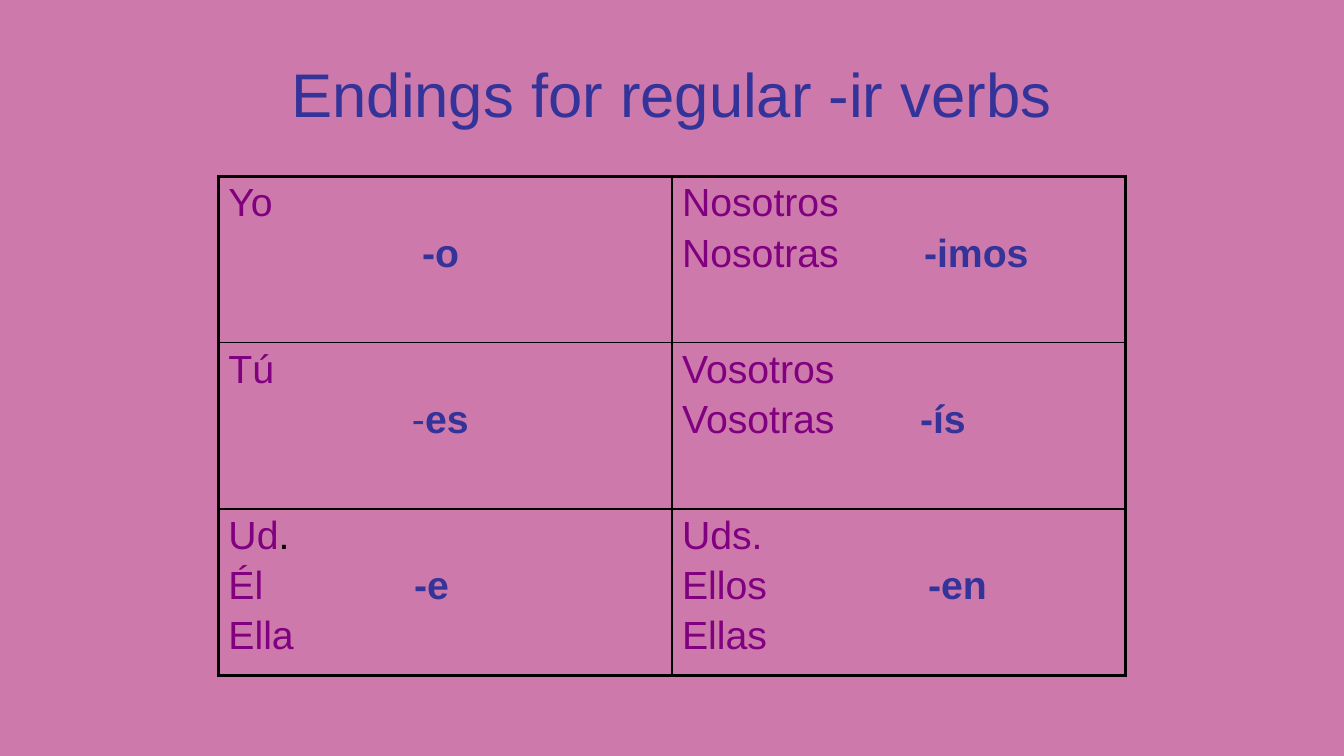
from lxml import etree
from pptx import Presentation
from pptx.dml.color import RGBColor
from pptx.enum.text import MSO_ANCHOR, PP_ALIGN
from pptx.oxml.ns import qn
from pptx.util import Emu, Inches, Pt

CENTER = PP_ALIGN.CENTER
MIDDLE = MSO_ANCHOR.MIDDLE
TITLE_ONLY = 5
COLS, ROWS = 80, 45

PINK, BLUE, PURPLE, BLACK = "CD79AB", "333399", "800080", "000000"
THICK, THIN = 2.25, 1

# Each cell: the tab stop of its ending in inches, then its lines.
# Each line is a list of runs: text, colour, bold.
ENDINGS = [
    [(1.92, [[("Yo", PURPLE, False)],
             [("\t-o", BLUE, True)]]),
     (2.4, [[("Nosotros", PURPLE, False)],
            [("Nosotras", PURPLE, False), ("\t-imos", BLUE, True)]])],
    [(1.82, [[("Tú", PURPLE, False)],
             [("\t-", BLUE, False), ("es", BLUE, True)]]),
     (2.36, [[("Vosotros", PURPLE, False)],
             [("Vosotras", PURPLE, False), ("\t-ís", BLUE, True)]])],
    [(1.84, [[("Ud", PURPLE, False), (".", BLACK, False)],
             [("Él", PURPLE, False), ("\t-e", BLUE, True)],
             [("Ella", PURPLE, False)]]),
     (2.44, [[("Uds.", PURPLE, False)],
             [("Ellos", PURPLE, False), ("\t-en", BLUE, True)],
             [("Ellas", PURPLE, False)]])],
]


def rgb(color):
    return RGBColor.from_string(color)


class Deck:
    font = "Arial"
    title_size = Pt(44)
    body_size = Pt(28)
    line_gap = Pt(4.6)

    def __init__(self, width, height):
        self.prs = Presentation()
        self.prs.slide_width, self.prs.slide_height = width, height

    def box(self, col, row, cols, rows):
        """Turn grid units into left, top, width and height."""
        x, y = self.prs.slide_width / COLS, self.prs.slide_height / ROWS
        return [Emu(round(n)) for n in (col * x, row * y, cols * x, rows * y)]

    def slide(self, color):
        self.s = self.prs.slides.add_slide(self.prs.slide_layouts[TITLE_ONLY])
        fill = self.s.background.fill
        fill.solid()
        fill.fore_color.rgb = rgb(color)

    def title(self, text, color, *grid):
        sp = self.s.shapes.title
        sp.left, sp.top, sp.width, sp.height = self.box(*grid)
        tf = sp.text_frame
        tf.text = text
        tf.vertical_anchor = MIDDLE
        p = tf.paragraphs[0]
        p.alignment = CENTER
        p.font.name, p.font.size = self.font, self.title_size
        p.font.color.rgb = rgb(color)

    def table(self, rows, *grid):
        n_rows, n_cols = len(rows), len(rows[0])
        tbl = self.s.shapes.add_table(n_rows, n_cols, *self.box(*grid)).table
        tbl.first_row = tbl.horz_banding = False
        for i, row in enumerate(rows):
            for j, (stop, lines) in enumerate(row):
                cell = tbl.cell(i, j)
                outer = {"L": j == 0, "R": j == n_cols - 1,
                         "T": i == 0, "B": i == n_rows - 1}
                self.borders(cell, outer)
                cell.fill.background()
                self.lines(cell.text_frame, stop, lines)

    def borders(self, cell, outer):
        """Draw the four edges, thick where outer is true."""
        tc_pr = cell._tc.get_or_add_tcPr()
        for side, is_outer in outer.items():
            width = Pt(THICK if is_outer else THIN)
            ln = etree.SubElement(tc_pr, qn(f"a:ln{side}"), w=str(width))
            fill = etree.SubElement(ln, qn("a:solidFill"))
            etree.SubElement(fill, qn("a:srgbClr"), val=BLACK)

    def lines(self, tf, stop, lines):
        for i, runs in enumerate(lines):
            p = tf.add_paragraph() if i else tf.paragraphs[0]
            p.space_before = self.line_gap if i else Pt(0)
            tabs = etree.SubElement(p._p.get_or_add_pPr(), qn("a:tabLst"))
            etree.SubElement(tabs, qn("a:tab"), pos=str(Inches(stop)), algn="l")
            p.font.name, p.font.size = self.font, self.body_size
            for text, color, bold in runs:
                r = p.add_run()
                r.text = text
                r.font.bold = bold
                r.font.color.rgb = rgb(color)


def main():
    deck = Deck(Inches(13.33), Inches(7.5))
    deck.slide(PINK)
    deck.title("Endings for regular -ir verbs", BLUE, 4, 1.8, 72, 7.5)
    deck.table(ENDINGS, 13, 10.5, 54, 29.7)
    deck.prs.save("out.pptx")


if __name__ == "__main__":
    main()
